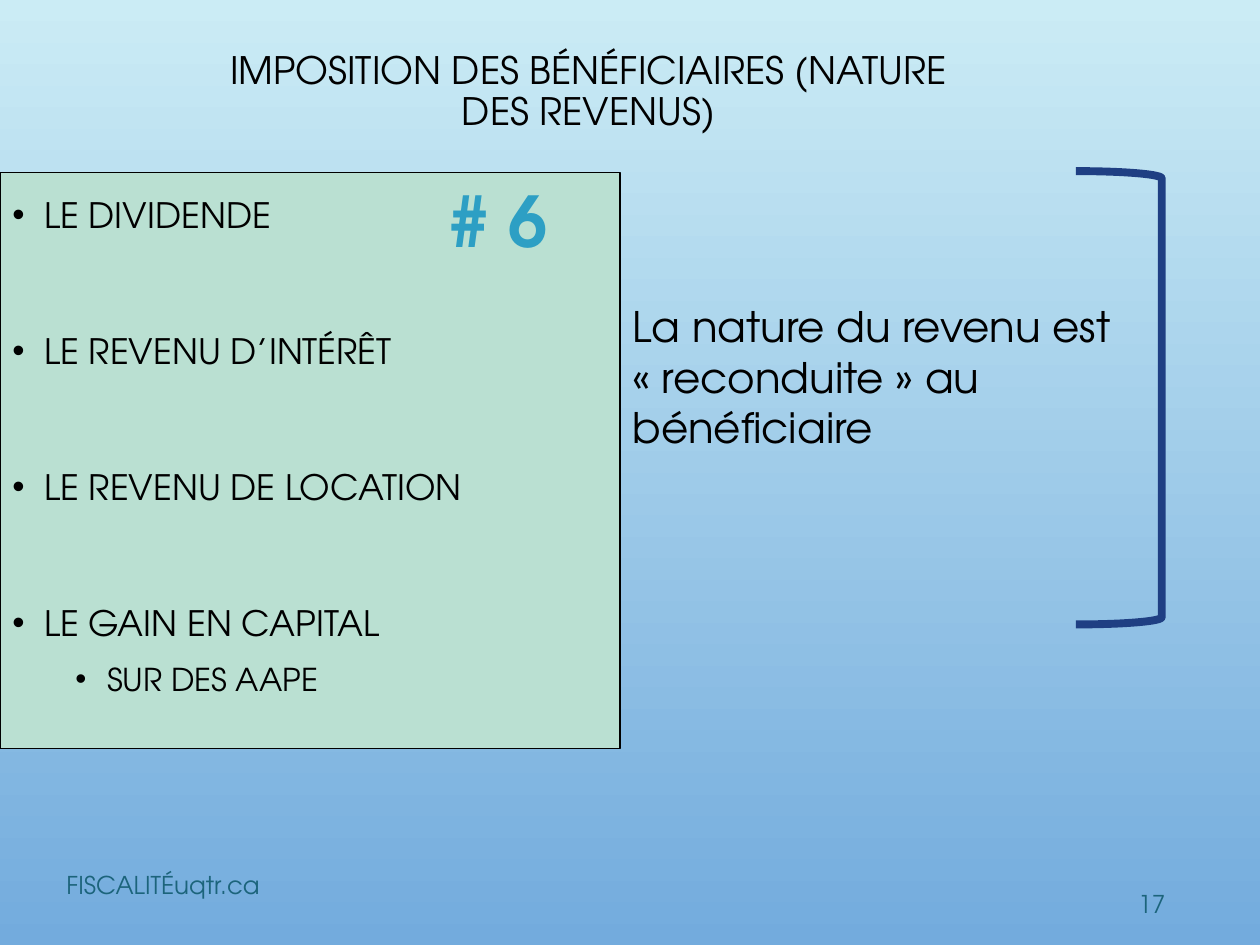
from dataclasses import dataclass

from lxml.etree import SubElement
from pptx import Presentation
from pptx.dml.color import RGBColor
from pptx.enum.shapes import MSO_SHAPE as Shape
from pptx.enum.text import MSO_ANCHOR as Anchor, MSO_AUTO_SIZE as AutoSize, PP_ALIGN as Align
from pptx.oxml.ns import qn
from pptx.util import Cm, Pt

FONT = "TeX Gyre Adventor"
BLACK = "000000"
TEAL = "1C647B"


@dataclass
class Box:
    left: float
    top: float
    width: float
    height: float

    def lengths(self) -> list:
        return [Cm(value) for value in (self.left, self.top, self.width, self.height)]


@dataclass
class Label:
    text: str
    box: Box
    size: float
    color: str = BLACK
    bold: bool = False
    anchor: Anchor = Anchor.TOP
    align: Align = Align.LEFT
    auto_size: AutoSize = AutoSize.NONE
    side_margin: float = 0.25


@dataclass
class Bullet:
    text: str
    size: float = 20
    space_before: float = 48.9
    level: int = 0
    indent: float = 0.64


LABELS = [
    Label("FISCALITÉuqtr.ca", Box(1.09, 17.32, 15.06, 1.02), 14, TEAL, anchor=Anchor.MIDDLE),
    Label("17", Box(22.71, 17.7, 1.02, 1.02), 14, TEAL, anchor=Anchor.MIDDLE,
          align=Align.CENTER, side_margin=0.05),
    Label("La nature du revenu est «\u00a0reconduite\u00a0» au bénéficiaire",
          Box(12.5, 5.94, 11.61, 3.33), 24, auto_size=AutoSize.SHAPE_TO_FIT_TEXT),
    Label("# 6", Box(8.81, 3.45, 3.02, 1.96), 40, "2D9FC4", True,
          auto_size=AutoSize.SHAPE_TO_FIT_TEXT),
]

BULLETS = [
    Bullet("LE DIVIDENDE", space_before=0),
    Bullet("LE REVENU D’INTÉRÊT"),
    Bullet("LE REVENU DE LOCATION"),
    Bullet("LE GAIN EN CAPITAL"),
    Bullet("SUR DES AAPE", 18, 5, 1, 1.91),
]


def rgb(color: str) -> RGBColor:
    return RGBColor.from_string(color)


def apply(target, values: dict) -> None:
    for name, value in values.items():
        setattr(target, name, value)


def format_font(paragraph, size: float, color: str = BLACK, bold: bool = False) -> None:
    apply(paragraph.font, {"name": FONT, "size": Pt(size), "bold": bold})
    paragraph.font.color.rgb = rgb(color)


def set_background(slide, top: str, bottom: str) -> None:
    fill = slide.background.fill
    fill.gradient()
    fill.gradient_angle = 270
    for stop, color, position in zip(fill.gradient_stops, (top, bottom), (0, 1)):
        stop.color.rgb = rgb(color)
        stop.position = position


def set_title(slide, text: str, box: Box) -> None:
    title = slide.shapes.title
    apply(title, dict(zip(("left", "top", "width", "height"), box.lengths())))
    frame = title.text_frame
    frame.text = text
    apply(frame, {"word_wrap": True, "auto_size": AutoSize.NONE,
                  "vertical_anchor": Anchor.MIDDLE})
    paragraph = frame.paragraphs[0]
    apply(paragraph, {"alignment": Align.CENTER, "line_spacing": 0.9})
    format_font(paragraph, 21.6)


def add_label(slide, label: Label) -> None:
    frame = slide.shapes.add_textbox(*label.box.lengths()).text_frame
    frame.text = label.text
    margin = Cm(label.side_margin)
    apply(frame, {"word_wrap": True, "auto_size": label.auto_size,
                  "vertical_anchor": label.anchor,
                  "margin_left": margin, "margin_right": margin})
    paragraph = frame.paragraphs[0]
    paragraph.alignment = label.align
    format_font(paragraph, label.size, label.color, label.bold)


def add_outline(slide, kind: Shape, box: Box, color: str, width: float):
    shape = slide.shapes.add_shape(kind, *box.lengths())
    shape.shadow.inherit = False
    shape.fill.background()
    shape.line.color.rgb = rgb(color)
    shape.line.width = Pt(width)
    return shape


def format_bullet(paragraph, bullet: Bullet) -> None:
    paragraph.text = bullet.text
    apply(paragraph, {"level": bullet.level, "alignment": Align.LEFT, "line_spacing": 1.2,
                      "space_before": Pt(bullet.space_before)})
    properties = paragraph._p.get_or_add_pPr()
    properties.set("marL", str(Cm(bullet.indent)))
    properties.set("indent", str(-Cm(0.64)))
    SubElement(properties, qn("a:buFont")).set("typeface", "Arial")
    SubElement(properties, qn("a:buChar")).set("char", "•")
    format_font(paragraph, bullet.size)


def add_income_list(slide, box: Box, bullets: list[Bullet]) -> None:
    panel = add_outline(slide, Shape.RECTANGLE, box, BLACK, 0.75)
    panel.fill.solid()
    panel.fill.fore_color.rgb = rgb("BAE0D2")
    frame = panel.text_frame
    apply(frame, {"word_wrap": True, "vertical_anchor": Anchor.TOP, "margin_top": Cm(0.25)})
    for index, bullet in enumerate(bullets):
        paragraph = frame.add_paragraph() if index else frame.paragraphs[0]
        format_bullet(paragraph, bullet)


def main() -> None:
    presentation = Presentation()
    apply(presentation, {"slide_width": Cm(25.4), "slide_height": Cm(19.05)})
    slide = presentation.slides.add_slide(presentation.slide_layouts[5])
    set_background(slide, "CBECF5", "73ABDD")
    set_title(slide, "IMPOSITION DES BÉNÉFICIAIRES (NATURE DES REVENUS)",
              Box(3.71, 0.91, 16.31, 1.91))
    add_income_list(slide, Box(0, 3.48, 12.5, 11.61), BULLETS)
    add_outline(slide, Shape.RIGHT_BRACKET, Box(21.69, 3.45, 1.73, 9.14), "1F3F83", 4.5)
    for label in LABELS:
        add_label(slide, label)
    presentation.save("out.pptx")


if __name__ == "__main__":
    main()
